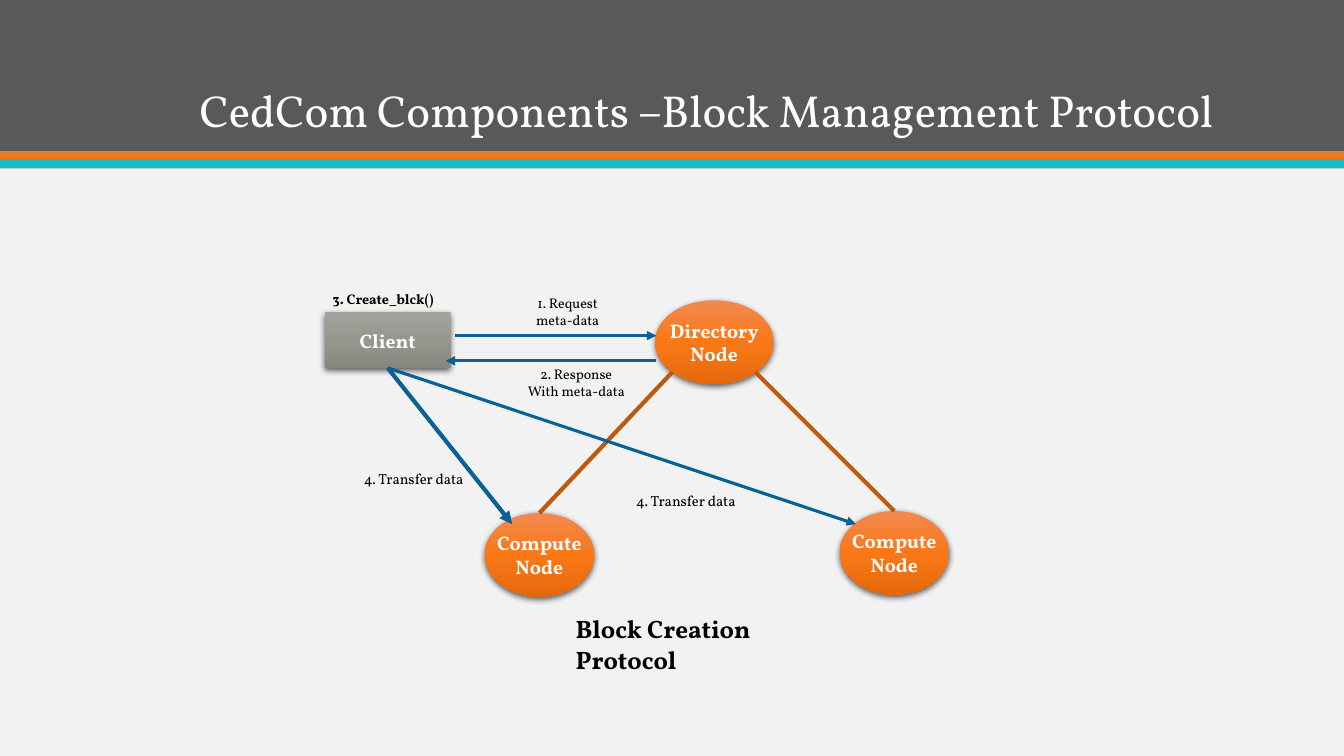
from copy import deepcopy

from lxml.etree import SubElement
from pptx import Presentation
from pptx.dml.color import RGBColor
from pptx.enum.shapes import MSO_CONNECTOR, MSO_SHAPE
from pptx.enum.text import MSO_ANCHOR, MSO_AUTO_SIZE, PP_ALIGN
from pptx.oxml.ns import qn
from pptx.util import Inches, Pt

FONT = "Vollkorn"
PAPER = RGBColor(0xF2, 0xF2, 0xF2)
CHARCOAL = RGBColor(0x59, 0x59, 0x59)
ORANGE = RGBColor(0xEF, 0x79, 0x20)
TEAL = RGBColor(0x1E, 0xB8, 0xC1)
WHITE = RGBColor(0xFF, 0xFF, 0xFF)
BLACK = RGBColor(0x00, 0x00, 0x00)
RUST = RGBColor(0xBE, 0x59, 0x0E)
BLUE = RGBColor(0x0B, 0x61, 0x96)
GREY_GRADIENT = (RGBColor(0xA2, 0xA3, 0x9C), RGBColor(0x96, 0x98, 0x90),
                 RGBColor(0x86, 0x88, 0x7F))
ORANGE_GRADIENT = (RGBColor(0xF3, 0x89, 0x50), RGBColor(0xF9, 0x78, 0x16),
                   RGBColor(0xE5, 0x69, 0x0C))


class Diagram:
    def __init__(self, slide):
        self.s = slide
        fill = slide.background.fill
        fill.solid()
        fill.fore_color.rgb = PAPER

    def set_text(self, tf, text, size, color, bold=False, align=PP_ALIGN.CENTER):
        tf.text = text
        for p in tf.paragraphs:
            p.alignment = align
            for r in p.runs:
                r.font.name = FONT
                r.font.size = Pt(size)
                r.font.bold = bold
                r.font.color.rgb = color

    def band(self, top, height, color):
        sp = self.s.shapes.add_shape(MSO_SHAPE.RECTANGLE, 0, Inches(top),
                                     Inches(13.33), Inches(height))
        sp.shadow.inherit = False
        sp.fill.solid()
        sp.fill.fore_color.rgb = color
        sp.line.fill.background()

    def title(self, text):
        sp = self.s.shapes.title
        self.s.shapes.element.append(sp.element)
        sp.left, sp.top = Inches(1.88), Inches(0.28)
        sp.width, sp.height = Inches(11.16), Inches(1.13)
        tf = sp.text_frame
        tf.vertical_anchor = MSO_ANCHOR.BOTTOM
        tf.auto_size = MSO_AUTO_SIZE.NONE
        self.set_text(tf, text, 32, WHITE, align=PP_ALIGN.LEFT)
        tf.paragraphs[0].line_spacing = 0.9

    def node(self, kind, text, left, top, width, height, colors):
        sp = self.s.shapes.add_shape(kind, Inches(left), Inches(top),
                                     Inches(width), Inches(height))
        sp.line.fill.background()
        sp.fill.gradient()
        sp.fill.gradient_angle = 270
        first = sp.element.spPr.find(".//" + qn("a:gs"))
        middle = deepcopy(first)
        middle.set("pos", "50000")
        first.addnext(middle)
        for stop, color in zip(sp.fill.gradient_stops, colors):
            stop.color.rgb = color
        self.cast_shadow(sp)
        tf = sp.text_frame
        tf.word_wrap = False
        tf.vertical_anchor = MSO_ANCHOR.MIDDLE
        self.set_text(tf, text, 14, WHITE, bold=True)
        return sp

    def cast_shadow(self, sp):
        sp.shadow.inherit = False
        effects = sp.element.spPr.find(qn("a:effectLst"))
        shadow = SubElement(effects, qn("a:outerShdw"), blurRad=str(Pt(4.5)),
                            dist=str(Pt(1.5)), dir="5400000", rotWithShape="0")
        black = SubElement(shadow, qn("a:srgbClr"), val="000000")
        SubElement(black, qn("a:alpha"), val="63000")

    def label(self, text, left, top, width, height, size=10, bold=False,
              align=PP_ALIGN.CENTER, wrap=False):
        sp = self.s.shapes.add_textbox(Inches(left), Inches(top),
                                       Inches(width), Inches(height))
        tf = sp.text_frame
        tf.word_wrap = wrap
        self.set_text(tf, text, size, BLACK, bold, align)

    def line(self, start, end, color, width, arrow=False,
             begin_at=None, end_at=None):
        c = self.s.shapes.add_connector(MSO_CONNECTOR.STRAIGHT,
                                        *map(Inches, start + end))
        c.line.color.rgb = color
        c.line.width = Pt(width)
        if begin_at:
            c.begin_connect(*begin_at)
        if end_at:
            c.end_connect(*end_at)
        if arrow:
            SubElement(c.element.spPr.find(qn("a:ln")), qn("a:tailEnd"),
                       type="triangle")
        SubElement(c.element.spPr, qn("a:effectLst"))


def main():
    prs = Presentation()
    prs.slide_width, prs.slide_height = Inches(13.33), Inches(7.5)
    d = Diagram(prs.slides.add_slide(prs.slide_layouts[5]))

    d.band(0, 1.5, CHARCOAL)
    d.band(1.5, 0.09, ORANGE)
    d.band(1.58, 0.09, TEAL)
    d.title("CedCom Components –Block Management Protocol")

    client = d.node(MSO_SHAPE.RECTANGLE, "Client", 3.22, 3.1, 1.25, 0.55,
                    GREY_GRADIENT)
    d.node(MSO_SHAPE.OVAL, "Directory\nNode", 6.5, 2.98, 1.17, 0.83,
           ORANGE_GRADIENT)
    computes = [d.node(MSO_SHAPE.OVAL, "Compute\nNode", left, top, 1.08, 0.83,
                       ORANGE_GRADIENT)
                for left, top in ((4.81, 5.09), (8.33, 5.07))]

    d.line((6.67, 3.69), (5.35, 5.09), RUST, 3, end_at=(computes[0], 0))
    d.line((7.49, 3.69), (8.87, 5.07), RUST, 3, end_at=(computes[1], 0))
    d.line((4.51, 3.33), (6.51, 3.33), BLUE, 2.25, arrow=True)
    d.line((6.51, 3.58), (4.42, 3.58), BLUE, 2.25, arrow=True)
    for end, width in (((5.08, 5.2), 3), ((8.49, 5.2), 2.25)):
        d.line((3.85, 3.65), end, BLUE, width, arrow=True, begin_at=(client, 2))

    d.label("1. Request\nmeta-data", 5.18, 2.87, 0.9, 0.44)
    d.label("2. Response\nWith meta-data", 5.12, 3.58, 1.19, 0.44)
    d.label("3. Create_blck()", 3.2, 2.83, 1.2, 0.27, bold=True)
    for left, top in ((3.51, 4.61), (6.21, 4.83)):
        d.label("4. Transfer data", left, top, 1.25, 0.28, 10.5,
                align=PP_ALIGN.LEFT)
    d.label("Block Creation Protocol", 5.61, 6.04, 2.9, 0.4, 18, bold=True,
            align=PP_ALIGN.LEFT, wrap=True)

    prs.save("out.pptx")


if __name__ == "__main__":
    main()
